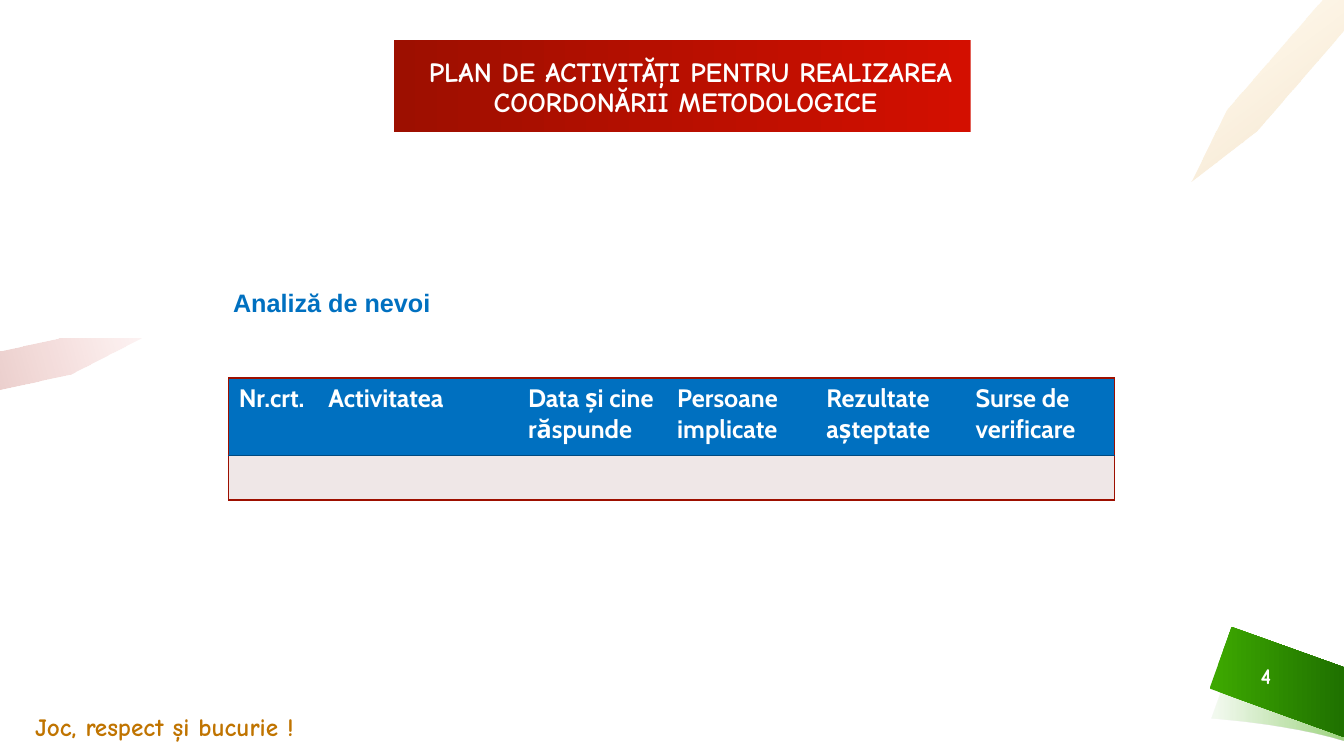
from lxml import etree
from pptx import Presentation
from pptx.dml.color import RGBColor
from pptx.enum.text import MSO_ANCHOR, MSO_AUTO_SIZE, PP_ALIGN
from pptx.oxml.ns import qn
from pptx.util import Pt

MIDDLE, TOP = MSO_ANCHOR.MIDDLE, MSO_ANCHOR.TOP
LEFT, CENTER = PP_ALIGN.LEFT, PP_ALIGN.CENTER
NO_FIT = MSO_AUTO_SIZE.NONE

TITLE = "PLAN DE ACTIVITĂȚI PENTRU REALIZAREA COORDONĂRII METODOLOGICE"
MOTTO = "Joc, respect și bucurie !"
HEADING = "Analiză de nevoi"
PAGE = "4"
HEADERS = ["Nr.crt.", "Activitatea", "Data și cine răspunde",
           "Persoane implicate", "Rezultate așteptate", "Surse de verificare"]
COLUMN_WIDTHS = [64, 142.6, 106.6, 106.6, 106.6, 106.6]
ROW_HEIGHTS = [55.4, 31.7]
ROW_FILLS = ["0070C0", "EFE7E7"]
RED, NAVY, WHITE = "9D0F00", "004A80", "FFFFFF"


def curve(start, control_1, control_2, end, steps=12):
    return [tuple((1 - t) ** 3 * a + 3 * (1 - t) ** 2 * t * b
                  + 3 * (1 - t) * t ** 2 * c + t ** 3 * d
                  for a, b, c, d in zip(start, control_1, control_2, end))
            for t in (step / steps for step in range(steps + 1))]


RIBBON_SHADE = (
    curve((865.4, 513.4), (865.4, 513.4), (920.2, 517), (959.8, 529.2))
    + curve((959.8, 481), (915.8, 468.7), (881.3, 469.4), (881.3, 469.4)))
RIBBON = [(959.8, 476.6), (879.8, 447.8), (864, 491.8), (959.8, 526.3)]
LEFT_PENCIL = [(101, 241.6), (41.8, 241.6), (0, 250.6), (0, 277.9), (50.4, 267.1)]
RIGHT_PENCIL = [(944.6, 0), (876.2, 78.5), (851, 129.6), (897.8, 93.6),
                (959.8, 22.3), (959.8, 0)]
DECORATIONS = [
    (RIBBON_SHADE, [(3, "3DA800", 6), (100, "3DA800", 50)], 0),
    (RIBBON, [(3, "3DA800", 100), (100, "1F7100", 100)], 0),
    (LEFT_PENCIL, [(0, "D30F00", 5), (100, "9D0F00", 20)], 164),
    (RIGHT_PENCIL, [(0, "FFAA00", 5), (100, "C07400", 20)], 53),
]


def color(value):
    return RGBColor.from_string(value)


def fill_gradient(shape, stops, clockwise):
    shape.fill.gradient()
    shape.fill.gradient_angle = (360 - clockwise) % 360
    for stop, (position, value, opacity) in zip(shape.fill.gradient_stops, stops):
        stop.position = position / 100
        stop.color.rgb = color(value)
    if opacity < 100:
        for node, (_, _, alpha) in zip(shape._element.spPr.iter(qn("a:srgbClr")), stops):
            etree.SubElement(node, qn("a:alpha"), val=str(alpha * 1000))


def write(frame, text, font, size, value, align=LEFT):
    paragraph = frame.paragraphs[0]
    paragraph.alignment = align
    run = paragraph.add_run()
    run.text = text
    run.font.name, run.font.size, run.font.bold = font, Pt(size), True
    run.font.color.rgb = color(value)
    return paragraph


def set_frame(frame, anchor, left, top, right, bottom):
    frame.word_wrap = True
    frame.auto_size = NO_FIT
    frame.vertical_anchor = anchor
    frame.margin_left, frame.margin_top = Pt(left), Pt(top)
    frame.margin_right, frame.margin_bottom = Pt(right), Pt(bottom)


def add_label(slide, box, insets, anchor, *style):
    frame = slide.shapes.add_textbox(*map(Pt, box)).text_frame
    set_frame(frame, anchor, *insets)
    write(frame, *style)


def set_borders(cell, borders):
    properties = cell._tc.get_or_add_tcPr()
    for index, side in enumerate(("a:lnL", "a:lnR", "a:lnT", "a:lnB")):
        line = etree.Element(qn(side), w=str(Pt(1)))
        if side in borders:
            solid = etree.SubElement(line, qn("a:solidFill"))
            etree.SubElement(solid, qn("a:srgbClr"), val=borders[side])
        else:
            etree.SubElement(line, qn("a:noFill"))
        properties.insert(index, line)


def add_decorations(slide):
    for points, stops, angle in DECORATIONS:
        corners = [(Pt(x), Pt(y)) for x, y in points]
        builder = slide.shapes.build_freeform(*corners[0], scale=1.0)
        builder.add_line_segments(corners[1:], close=True)
        outline = builder.convert_to_shape()
        outline.shadow.inherit = False
        outline.line.fill.background()
        fill_gradient(outline, stops, angle)


def add_title(slide):
    title = slide.shapes.title
    title.left, title.top, title.width, title.height = map(Pt, (281.5, 28.8, 411.8, 65.5))
    fill_gradient(title, [(0, "D30F00", 100), (100, RED, 100)], 180)
    set_frame(title.text_frame, MIDDLE, 11.5, 7.6, 7.2, 3.6)
    paragraph = write(title.text_frame, TITLE, "Comic Neue", 19.8, WHITE, CENTER)
    paragraph.line_spacing = 0.9
    paragraph._p.get_or_add_pPr().set("indent", str(Pt(7)))


def add_plan(slide):
    table = slide.shapes.add_table(
        len(ROW_HEIGHTS), len(HEADERS), Pt(163.4), Pt(270),
        Pt(sum(COLUMN_WIDTHS)), Pt(sum(ROW_HEIGHTS))).table
    for column, width in zip(table.columns, COLUMN_WIDTHS):
        column.width = Pt(width)
    for r, (height, row_fill) in enumerate(zip(ROW_HEIGHTS, ROW_FILLS)):
        table.rows[r].height = Pt(height)
        for c, header in enumerate(HEADERS):
            cell = table.cell(r, c)
            cell.fill.solid()
            cell.fill.fore_color.rgb = color(row_fill)
            borders = {"a:lnT": NAVY if r else RED, "a:lnB": RED if r else NAVY}
            if c == 0:
                borders["a:lnL"] = RED
            if c == len(HEADERS) - 1:
                borders["a:lnR"] = RED
            set_borders(cell, borders)
            if r == 0:
                write(cell.text_frame, header, "Cabin", 18, WHITE)


def main():
    deck = Presentation()
    deck.slide_width, deck.slide_height = Pt(960), Pt(540)
    slide = deck.slides.add_slide(deck.slide_layouts[5])
    add_decorations(slide)
    add_title(slide)
    add_label(slide, (13.7, 497.5, 258.5, 42.5), (11.3, 3.6, 7.2, 3.6), MIDDLE,
              MOTTO, "Comic Neue", 18, "C07400")
    add_label(slide, (879.1, 468, 50.4, 28.8), (7.2, 3.6, 7.2, 3.6), MIDDLE,
              PAGE, "Comic Neue", 16, WHITE, CENTER)
    add_label(slide, (114.5, 157, 745.2, 226.8), (52, 48, 7.2, 3.6), TOP,
              HEADING, "Arial", 18, "0070C0")
    add_plan(slide)
    deck.save("out.pptx")


if __name__ == "__main__":
    main()
